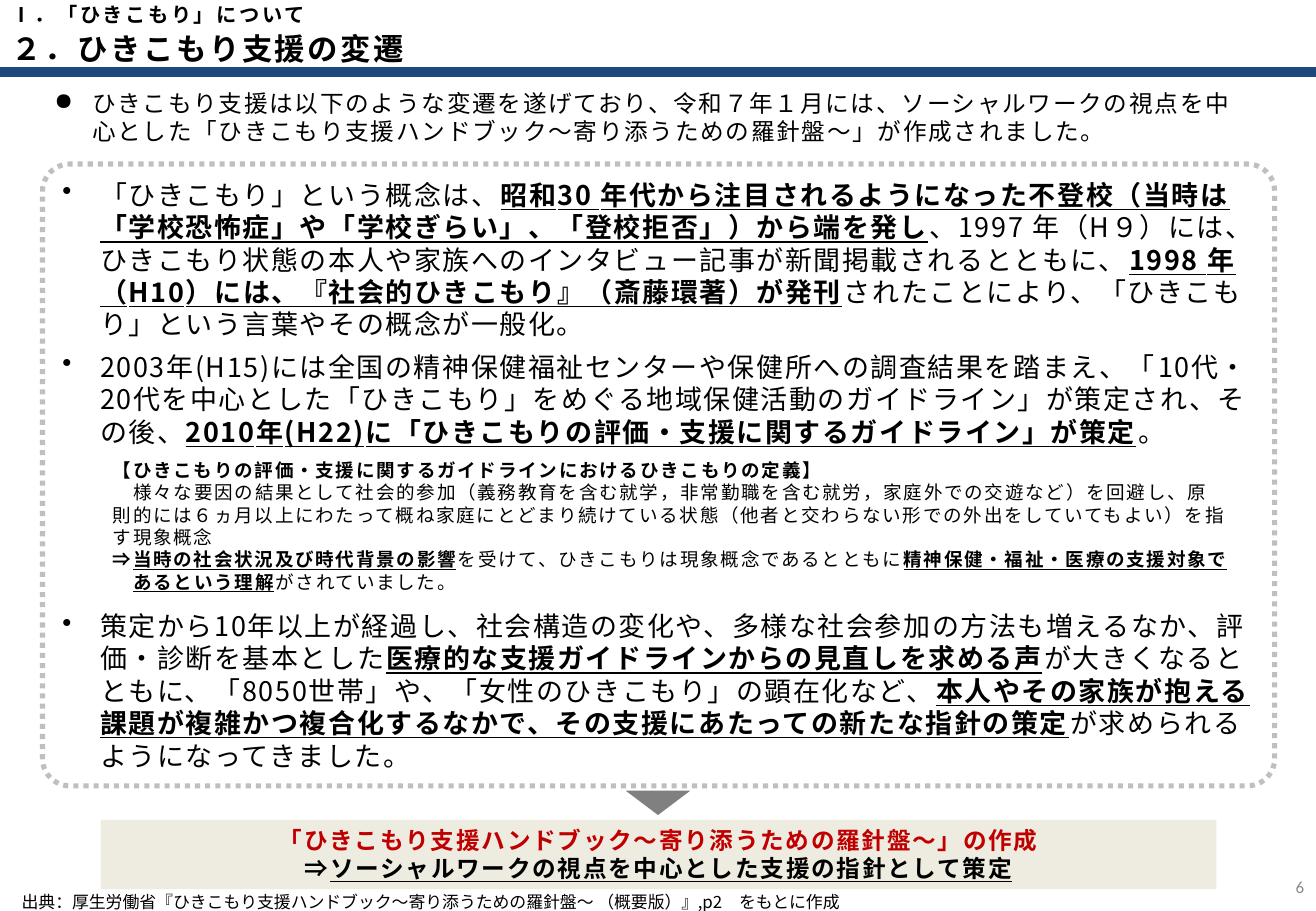
from dataclasses import dataclass
from lxml.etree import SubElement
from pptx import Presentation
from pptx.dml.color import RGBColor as Rgb
from pptx.enum.dml import MSO_LINE as Dash
from pptx.enum.shapes import MSO_CONNECTOR as Link, MSO_SHAPE as Kind
from pptx.enum.text import MSO_ANCHOR as Anchor, MSO_AUTO_SIZE as Fit, PP_ALIGN as Align
from pptx.oxml.ns import qn
from pptx.util import Pt

PX = 9144  # EMU in one px, 100 px to the inch
WIDE, HIGH = 1083, 750
HANG = 31
STEP = 17  # one full-width letter of the definition


@dataclass(frozen=True)
class Theme:
    font: str = "Noto Sans CJK JP"
    latin: str = "Calibri"
    ink: str = "000000"
    navy: str = "1F497D"
    red: str = "C00000"
    cream: str = "EEECE1"
    edge: str = "BFBFBF"
    gray: str = "808080"
    pale: str = "898989"
    title: int = 18
    body: int = 16
    lead: int = 14
    head: int = 12
    note: int = 11
    small: int = 10


T = Theme()

LEAD = [("ひきこもり支援は以下のような変遷を遂げており、令和７年１月には、ソーシャルワークの視点を中心とした「ひきこもり支援ハンドブック～寄り添うための羅針盤～」が作成されました。", "")]

# Each run is its text and marks: b bold, u underlined, r red
STORY = [
    [("「ひきこもり」という概念は、", ""),
     ("昭和30 年代から注目されるようになった不登校（当時は「学校恐怖症」や「学校ぎらい」、「登校拒否」）から端を発し", "bu"),
     ("、1997 年（H９）には、ひきこもり状態の本人や家族へのインタビュー記事が新聞掲載されるとともに、", ""),
     ("1998 年（H10）には、『社会的ひきこもり』（斎藤環著）が発刊", "bu"),
     ("されたことにより、「ひきこもり」という言葉やその概念が一般化。", "")],
    [("2003年(H15)には全国の精神保健福祉センターや保健所への調査結果を踏まえ、「10代・20代を中心とした「ひきこもり」をめぐる地域保健活動のガイドライン」が策定され、その後、", ""),
     ("2010年(H22)に「ひきこもりの評価・支援に関するガイドライン」が策定", "bu"),
     ("。", "")],
    [("策定から10年以上が経過し、社会構造の変化や、多様な社会参加の方法も増えるなか、評価・診断を基本とした", ""),
     ("医療的な支援ガイドラインからの見直しを求める声", "bu"),
     ("が大きくなるとともに、「8050世帯」や、「女性のひきこもり」の顕在化など、", ""),
     ("本人やその家族が抱える課題が複雑かつ複合化するなかで、その支援にあたっての新たな指針の策定", "bu"),
     ("が求められるようになってきました。", "")],
]
GAPS = [0, 6, 96]  # the last leaves room for the definition

DEFINE = [
    (0, 0, [("【ひきこもりの評価・支援に関するガイドラインにおけるひきこもりの定義】", "b")]),
    (0, STEP, [("様々な要因の結果として社会的参加（義務教育を含む就学，非常勤職を含む就労，家庭外での交遊など）を回避し、原則的には６ヵ月以上にわたって概ね家庭にとどまり続けている状態（他者と交わらない形での外出をしていてもよい）を指す現象概念", "")]),
    (0, 0, [("⇒", "b"), ("当時の社会状況及び時代背景の影響", "bu"),
            ("を受けて、ひきこもりは現象概念であるとともに", ""),
            ("精神保健・福祉・医療の支援対象で", "bu")]),
    (STEP, 0, [("あるという理解", "bu"), ("がされていました。", "")]),
]

RESULT = [
    [("「ひきこもり支援ハンドブック～寄り添うための羅針盤～」の作成", "br")],
    [("⇒", "b"), ("ソーシャルワークの視点を中心とした支援の指針として策定", "bu")],
]


def place(box):
    return [n * PX for n in box]


def apply(item, look):
    for name, value in look.items():
        setattr(item, name, value)


def shape(slide, kind, box, fill=None):
    item = slide.shapes.add_shape(kind, *place(box))
    item.shadow.inherit = False
    item.line.fill.background()
    if fill:
        item.fill.solid()
        item.fill.fore_color.rgb = Rgb.from_string(fill)
    else:
        item.fill.background()
    return item


def text(slide, box, **look):
    item = slide.shapes.add_textbox(*place(box))
    return frame(item, **look)


def frame(item, **look):
    body = item.text_frame
    apply(body, {"word_wrap": True, "auto_size": Fit.NONE, **look})
    return body


def write(body, runs, size, space=0, color=T.ink, font=T.font,
          bullet="", left=0, first=0, **look):
    """Fill the empty first paragraph, or add one; space is between letters, in pt."""
    para = body.paragraphs[0]
    if para.runs:
        para = body.add_paragraph()
    apply(para, {"alignment": Align.LEFT, **look})
    props = para._p.get_or_add_pPr()
    props.set("marL", str(left * PX))
    props.set("indent", str(first * PX))
    if bullet:
        SubElement(props, qn("a:buChar")).set("char", bullet)
    for words, marks in runs:
        run = para.add_run()
        run.text = words
        apply(run.font, {"name": font, "size": Pt(size),
                         "bold": "b" in marks, "underline": "u" in marks})
        run.font.color.rgb = Rgb.from_string(T.red if "r" in marks else color)
        props = run._r.get_or_add_rPr()
        props.set("spc", str(int(space * 100)))
        SubElement(props, qn("a:ea")).set("typeface", font)


def header(slide, box):
    x, y, w, h = box
    rows = [("Ⅰ．「ひきこもり」について", T.head, 1, 21),
            ("２．ひきこもり支援の変遷", T.title, 20, 39)]
    for words, size, top, tall in rows:
        body = text(slide, (x, y + top, 907, tall), vertical_anchor=Anchor.MIDDLE)
        write(body, [(words, "b")], size, 1.5)
    rule = slide.shapes.add_connector(Link.STRAIGHT, *place((x, y + h, x + w, y + h)))
    rule.line.color.rgb = Rgb.from_string(T.navy)
    rule.line.width = Pt(6)
    SubElement(rule._element.spPr, qn("a:effectLst"))


def lead(slide, box):
    write(text(slide, box), LEAD, T.lead, 1, bullet="●", left=HANG, first=-HANG)


def story(slide, box):
    x, y, w, h = box
    panel = shape(slide, Kind.ROUNDED_RECTANGLE, box)
    panel.adjustments[0] = 0.044
    panel.line.color.rgb = Rgb.from_string(T.edge)
    apply(panel.line, {"width": Pt(3), "dash_style": Dash.ROUND_DOT})
    body = frame(panel, vertical_anchor=Anchor.MIDDLE)
    for runs, gap in zip(STORY, GAPS):
        write(body, runs, T.body, 1, bullet="•", left=HANG, first=-HANG,
              space_before=Pt(gap))
    body = text(slide, (x + 48, y + 238, 937, 121), auto_size=Fit.SHAPE_TO_FIT_TEXT)
    for left, first, runs in DEFINE:
        write(body, runs, T.note, 1, left=left, first=first)


def result(slide, box):
    x, y, w, h = box
    arrow = shape(slide, Kind.ISOSCELES_TRIANGLE, (x + (w - 53) // 2, y - 24, 53, 20), T.gray)
    arrow.rotation = 180
    body = frame(shape(slide, Kind.RECTANGLE, box, T.cream),
                 auto_size=Fit.SHAPE_TO_FIT_TEXT, vertical_anchor=Anchor.TOP)
    for runs in RESULT:
        write(body, runs, T.lead, 1, alignment=Align.CENTER)


def footer(slide, box):
    x, y, w, h = box
    body = text(slide, (x + 8, y + 24, 898, 16), margin_top=0, margin_bottom=0)
    write(body, [("出典：厚生労働省『ひきこもり支援ハンドブック～寄り添うための羅針盤～ （概要版）』,p2　をもとに作成", "")], T.small)
    body = text(slide, (x + w - 41, y, 41, h), vertical_anchor=Anchor.MIDDLE)
    write(body, [("6", "")], T.small, color=T.pale, font=T.latin, alignment=Align.RIGHT)


def main():
    deck = Presentation()
    apply(deck, {"slide_width": WIDE * PX, "slide_height": HIGH * PX})
    slide = deck.slides.add_slide(deck.slide_layouts[6])
    header(slide, (0, 0, WIDE, 59))
    lead(slide, (35, 68, 995, 57))
    story(slide, (35, 135, 1014, 512))
    result(slide, (83, 675, 918, 57))
    footer(slide, (0, 710, WIDE, 40))
    deck.save("out.pptx")


if __name__ == "__main__":
    main()
